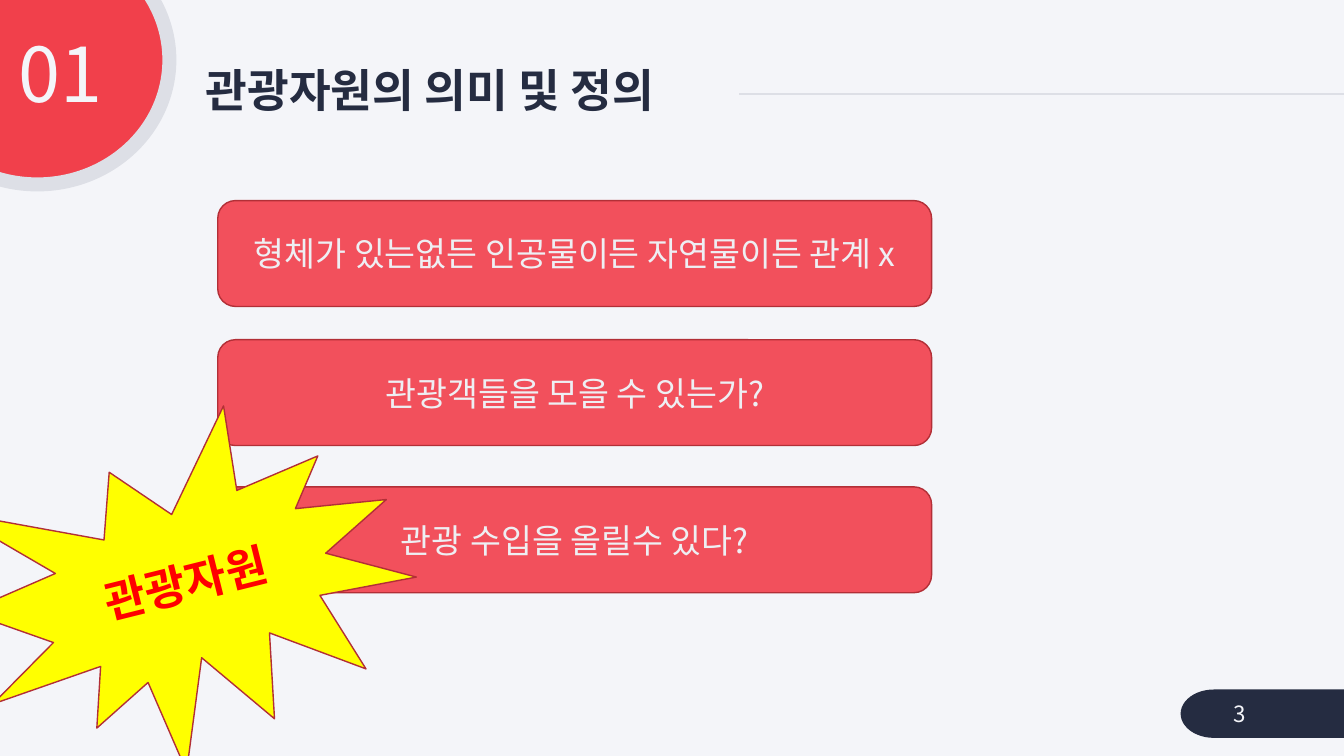
from lxml.etree import SubElement
from pptx import Presentation
from pptx.dml.color import RGBColor
from pptx.enum.shapes import MSO_CONNECTOR, MSO_SHAPE
from pptx.enum.text import MSO_ANCHOR, MSO_AUTO_SIZE, PP_ALIGN
from pptx.oxml.ns import qn
from pptx.util import Inches, Pt

NAVY, RED, CORAL, DARK_RED = "252C41", "F1404B", "F2505C", "B22F37"
PALE, GREY, OFF_WHITE = "F4F5F9", "DDDFE6", "EEEFF3"


def color(value):
    return RGBColor.from_string(value)


class SlideBuilder:
    font = "Noto Sans CJK KR"

    def __init__(self, presentation):
        self.slide = presentation.slides.add_slide(presentation.slide_layouts[5])
        self.slide.background.fill.solid()
        self.slide.background.fill.fore_color.rgb = color(PALE)

    def add_text(self, shape, text, size, text_color, bold=False, font=None,
                 align=PP_ALIGN.LEFT, anchor=MSO_ANCHOR.MIDDLE, spacing=None):
        frame = shape.text_frame
        frame.word_wrap = True
        frame.auto_size = MSO_AUTO_SIZE.NONE
        frame.vertical_anchor = anchor
        paragraph = frame.paragraphs[0]
        paragraph.alignment = align
        paragraph.line_spacing = spacing
        run = paragraph.add_run()
        run.text = text
        run.font.size = Pt(size)
        run.font.bold = bold
        run.font.color.rgb = color(text_color)
        run.font.name = font or self.font
        # Hangul takes its typeface from the East Asian font
        east_asian = SubElement(run.font._element, qn("a:ea"))
        east_asian.set("typeface", font or self.font)

    def title(self, text, left, top, width, height):
        shape = self.slide.shapes.title
        shape.left, shape.top = Inches(left), Inches(top)
        shape.width, shape.height = Inches(width), Inches(height)
        self.add_text(shape, text, 32.4, NAVY, bold=True, spacing=0.9)

    def text_box(self, text, left, top, width, height, size, **style):
        shape = self.slide.shapes.add_textbox(
            Inches(left), Inches(top), Inches(width), Inches(height))
        self.add_text(shape, text, size, PALE, **style)

    def shape(self, kind, left, top, width, height, fill, line=None, line_width=1):
        shape = self.slide.shapes.add_shape(
            kind, Inches(left), Inches(top), Inches(width), Inches(height))
        shape.shadow.inherit = False
        shape.fill.solid()
        shape.fill.fore_color.rgb = color(fill)
        if line:
            shape.line.color.rgb = color(line)
            shape.line.width = Pt(line_width)
        else:
            shape.line.fill.background()
        return shape

    def rule(self, left, right, top):
        connector = self.slide.shapes.add_connector(
            MSO_CONNECTOR.STRAIGHT, Inches(left), Inches(top), Inches(right), Inches(top))
        connector.line.color.rgb = color(GREY)
        connector.line.width = Pt(1.5)
        SubElement(connector._element.spPr, qn("a:effectLst"))


def main():
    presentation = Presentation()
    presentation.slide_width = Inches(13.33)
    presentation.slide_height = Inches(7.5)
    builder = SlideBuilder(presentation)

    # Header with section number
    builder.rule(7.33, 13.33, 0.93)
    builder.shape(MSO_SHAPE.OVAL, -0.94, -0.64, 2.62, 2.47, RED, GREY, 10)
    builder.title("관광자원의 의미 및 정의", 1.94, 0.59, 5.39, 0.67)
    builder.text_box("01", -0.11, 0.32, 1.22, 0.92, 54, align=PP_ALIGN.RIGHT,
                     anchor=MSO_ANCHOR.TOP, spacing=0.9)

    # Page number
    builder.shape(MSO_SHAPE.FLOWCHART_TERMINATOR, 11.71, 6.84, 2.05, 0.48, NAVY)
    builder.text_box("3", 12.14, 6.88, 1.09, 0.4, 16)

    # Criteria
    criteria = [
        (1.99, "형체가 있는없든 인공물이든 자연물이든 관계 x"),
        (3.37, "관광객들을 모을 수 있는가?"),
        (4.83, "관광 수입을 올릴수 있다?"),
    ]
    for top, text in criteria:
        box = builder.shape(MSO_SHAPE.ROUNDED_RECTANGLE, 2.16, top, 7.08, 1.05,
                            CORAL, DARK_RED)
        builder.add_text(box, text, 24, OFF_WHITE, align=PP_ALIGN.CENTER)

    # Tilted burst
    burst = builder.shape(MSO_SHAPE.EXPLOSION1, -0.31, 4.16, 4.41, 3.43,
                          "FFFF00", DARK_RED)
    burst.rotation = 346
    builder.add_text(burst, "관광자원", 32, "FF0000", bold=True,
                     font="Noto Sans CJK TC", align=PP_ALIGN.CENTER)

    presentation.save("out.pptx")


if __name__ == "__main__":
    main()
